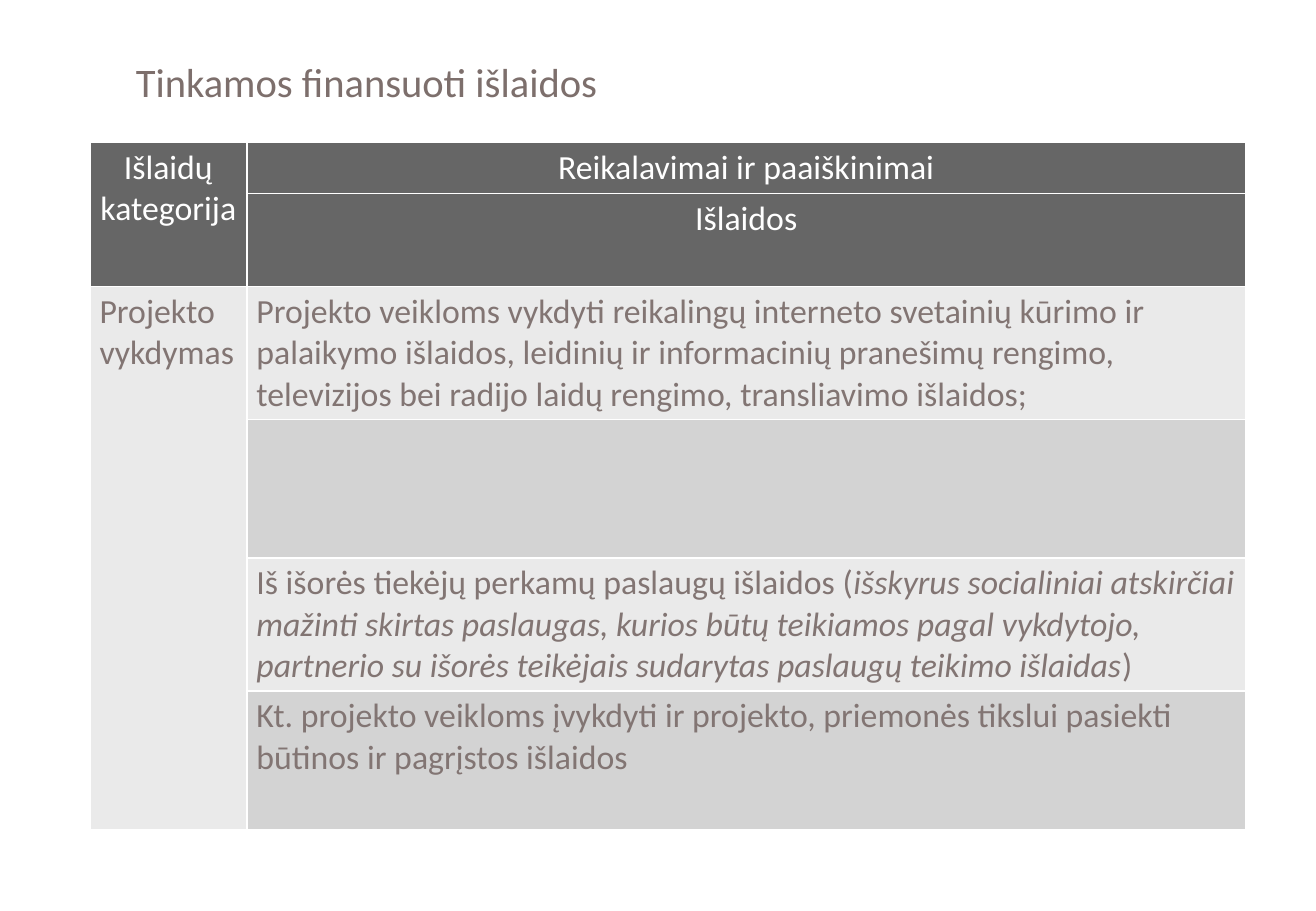
from lxml import etree
from pptx import Presentation
from pptx.dml.color import RGBColor
from pptx.enum.text import MSO_ANCHOR, PP_ALIGN
from pptx.oxml.ns import qn
from pptx.util import Cm, Pt

CENTER, LEFT = PP_ALIGN.CENTER, PP_ALIGN.LEFT
MIDDLE = MSO_ANCHOR.MIDDLE
FONT = "Calibri"
WHITE, TITLE_COLOR, BODY_COLOR = "FFFFFF", "7D6F6C", "827573"
HEADER_FILL, LIGHT_FILL, DARK_FILL = "666666", "EAEAEA", "D3D3D3"
HEADER_ROWS = 2


def format_runs(paragraph, size, color):
    for run in paragraph.runs:
        run.font.name = FONT
        run.font.size = Pt(size)
        run.font.color.rgb = RGBColor.from_string(color)


def add_borders(cell):
    """Draw a 1 pt white line on all four sides of a table cell."""
    properties = cell._tc.get_or_add_tcPr()
    for side in ("lnL", "lnR", "lnT", "lnB"):
        line = etree.SubElement(properties, qn(f"a:{side}"), w=str(Pt(1)))
        fill = etree.SubElement(line, qn("a:solidFill"))
        etree.SubElement(fill, qn("a:srgbClr"), val=WHITE)


presentation = Presentation()
presentation.slide_width, presentation.slide_height = Cm(27.51), Cm(19.05)
slide = presentation.slides.add_slide(presentation.slide_layouts[6])

title = slide.shapes.add_textbox(Cm(2.59), Cm(0.91), Cm(23.44), Cm(1.7))
title_frame = title.text_frame
title_frame.word_wrap = True
title_frame.vertical_anchor = MIDDLE
title_frame.text = "Tinkamos finansuoti išlaidos"
title_frame.paragraphs[0].line_spacing = 0.9
format_runs(title_frame.paragraphs[0], 24, TITLE_COLOR)

# Each cell is a list of (text, italic) runs.
rows = [
    [[("Išlaidų kategorija", False)], [("Reikalavimai ir paaiškinimai", False)]],
    [[], [("Išlaidos", False)]],
    [[("Projekto vykdymas", False)],
     [("Projekto veikloms vykdyti reikalingų interneto svetainių kūrimo ir "
       "palaikymo išlaidos, leidinių ir informacinių pranešimų rengimo, "
       "televizijos bei radijo laidų rengimo, transliavimo išlaidos;", False)]],
    [[], []],
    [[], [("Iš išorės tiekėjų perkamų paslaugų išlaidos (", False),
          ("išskyrus socialiniai atskirčiai mažinti skirtas paslaugas, kurios "
           "būtų teikiamos pagal vykdytojo, partnerio su išorės teikėjais "
           "sudarytas paslaugų teikimo išlaidas", True),
          (")", False)]],
    [[], [("Kt. projekto veikloms įvykdyti ir projekto, priemonės tikslui "
           "pasiekti būtinos ir pagrįstos išlaidos", False)]],
]
column_widths = [3.28, 20.88]
row_heights = [1.07, 1.94, 2.78, 2.9, 2.78, 2.9]

table = slide.shapes.add_table(
    len(rows), len(column_widths), Cm(1.88), Cm(2.98),
    Cm(sum(column_widths)), Cm(sum(row_heights))).table
table.first_row = False
table.horz_banding = False
for column, width in zip(table.columns, column_widths):
    column.width = Cm(width)
for row, height in zip(table.rows, row_heights):
    row.height = Cm(height)

for row_index, row_content in enumerate(rows):
    is_header = row_index < HEADER_ROWS
    for column_index, cell_runs in enumerate(row_content):
        cell = table.cell(row_index, column_index)
        add_borders(cell)
        if is_header:
            fill_color = HEADER_FILL
        elif column_index == 0 or row_index % 2 == 0:
            fill_color = LIGHT_FILL
        else:
            fill_color = DARK_FILL
        cell.fill.solid()
        cell.fill.fore_color.rgb = RGBColor.from_string(fill_color)
        cell.margin_left = cell.margin_right = Cm(0.2)
        cell.margin_top = cell.margin_bottom = Cm(0.1)
        paragraph = cell.text_frame.paragraphs[0]
        paragraph.alignment = CENTER if is_header else LEFT
        for text, italic in cell_runs:
            run = paragraph.add_run()
            run.text = text
            run.font.italic = italic
        format_runs(paragraph, 20, WHITE if is_header else BODY_COLOR)

table.cell(0, 0).merge(table.cell(HEADER_ROWS - 1, 0))
table.cell(HEADER_ROWS, 0).merge(table.cell(len(rows) - 1, 0))

presentation.save("out.pptx")
